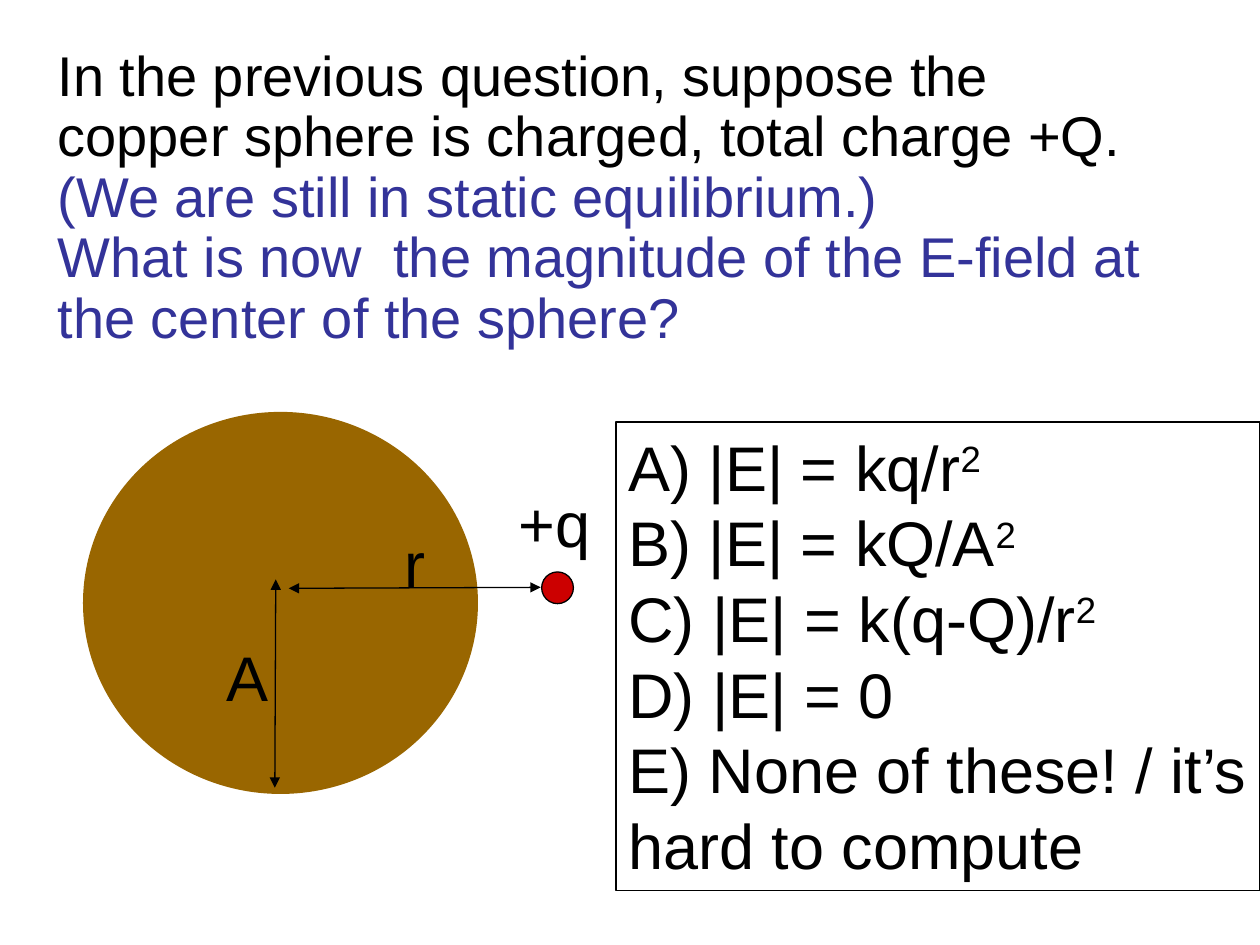
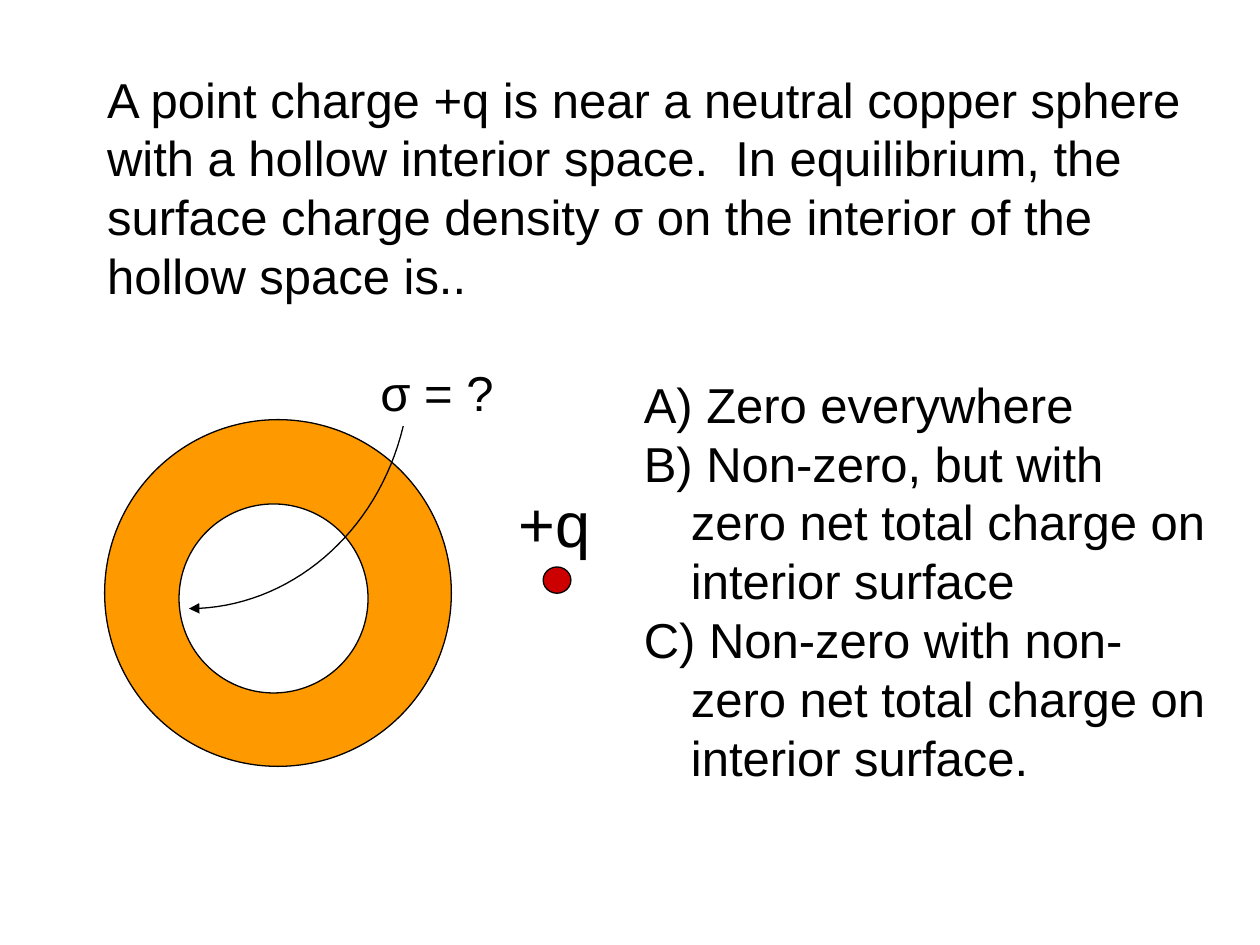
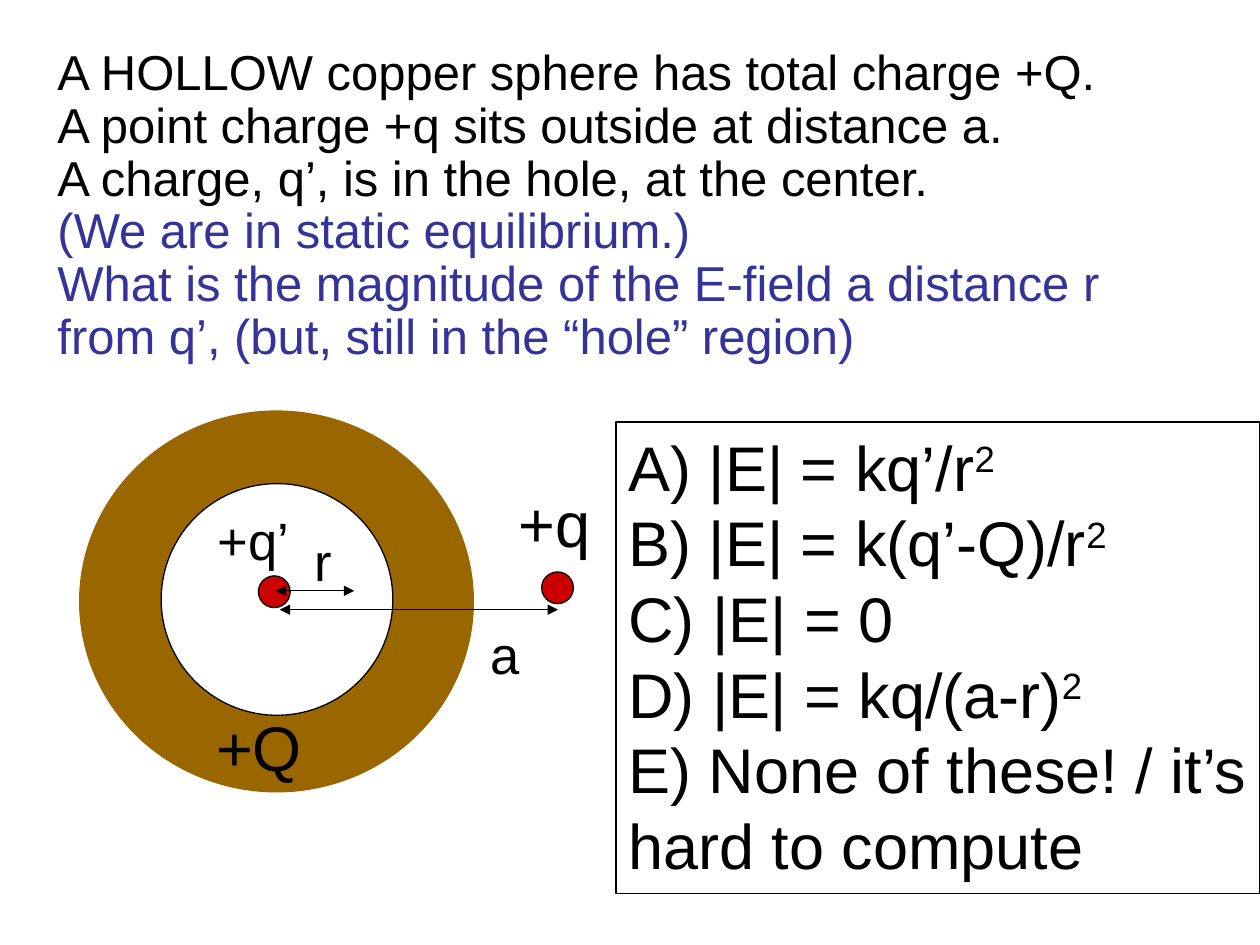
from lxml.etree import SubElement
from pptx import Presentation
from pptx.dml.color import RGBColor
from pptx.enum.shapes import MSO_CONNECTOR, MSO_SHAPE
from pptx.enum.text import MSO_ANCHOR, MSO_AUTO_SIZE, PP_ALIGN
from pptx.oxml.ns import qn
from pptx.util import Cm, Pt

BLACK, BLUE, RED = "000000", "333399", "CC0000"
COPPER, ORANGE, WHITE = "996600", "FF9900", "FFFFFF"
BODY = (0.91, 0.84, 22.73, 6.76)
SPOT = 0.64
LAST = "E) None of these! / it’s hard to compute"


def tint(code):
    """Turn a hex string into a colour."""
    return RGBColor.from_string(code)


def apply(item, form):
    """Set each attribute named in a dict of format values."""
    for name, value in form.items():
        setattr(item, name, value)


def stroke(line, code=BLACK, width=0.75, ends=()):
    """Style a line and put triangles on the named ends."""
    line.color.rgb = tint(code)
    line.width = Pt(width)
    for end in ends:
        SubElement(line._get_or_add_ln(), qn(f"a:{end}")).set("type", "triangle")


def write(frame, lines, size, wrap=True, fit=True, form=None):
    """Fill a frame with (text, colour) lines; a caret starts a superscript."""
    grow = MSO_AUTO_SIZE.SHAPE_TO_FIT_TEXT if fit else MSO_AUTO_SIZE.NONE
    apply(frame, {"word_wrap": wrap, "auto_size": grow,
                  "vertical_anchor": MSO_ANCHOR.TOP})
    for pos, (text, code) in enumerate(lines):
        para = frame.paragraphs[0] if pos == 0 else frame.add_paragraph()
        apply(para, {"alignment": PP_ALIGN.LEFT, **(form or {})})
        for rank, part in enumerate(text.split("^")):
            run = para.add_run()
            run.text = part
            apply(run.font, {"name": "Arial", "size": Pt(size)})
            run.font.color.rgb = tint(code)
            if rank:
                run._r.get_or_add_rPr().set("baseline", "30000")


def label(slide, text, x, y, wide, high=1.78, size=36, wrap=False):
    """Add a short label of one line."""
    box = slide.shapes.add_textbox(Cm(x), Cm(y), Cm(wide), Cm(high))
    write(box.text_frame, [(text, BLACK)], size, wrap)


def prompt(slide, lines, size, area=BODY, form=None):
    """Add the question at the top of the slide."""
    box = slide.shapes.add_textbox(*map(Cm, area))
    write(box.text_frame, lines, size, fit=False, form=form)


def disc(slide, x, y, wide, high, fill, edge=BLACK, width=0.75):
    """Add a filled ellipse."""
    oval = slide.shapes.add_shape(MSO_SHAPE.OVAL, Cm(x), Cm(y), Cm(wide), Cm(high))
    oval.shadow.inherit = False
    oval.fill.solid()
    oval.fill.fore_color.rgb = tint(fill)
    stroke(oval.line, edge, width)


def sphere(slide, x, y):
    """Add the copper sphere."""
    disc(slide, x, y, 7.75, 7.49, COPPER, COPPER, 6)


def charge(slide, x=10.92, y=11.53, wide=SPOT, high=SPOT):
    """Add a red point charge."""
    disc(slide, x, y, wide, high, RED)


def arrow(slide, *ends):
    """Add a straight line with a triangle at both ends."""
    line = slide.shapes.add_connector(MSO_CONNECTOR.STRAIGHT, *map(Cm, ends))
    stroke(line.line, ends=("headEnd", "tailEnd"))
    SubElement(line._element.spPr, qn("a:effectLst"))


def curve(slide, *knots):
    """Draw a cubic curve with a triangle at its start."""
    dots = []
    for step in range(33):
        t = step / 32
        mix = ((1 - t) ** 3, 3 * t * (1 - t) ** 2, 3 * t * t * (1 - t), t ** 3)
        dots.append([Cm(sum(w * k[axis] for w, k in zip(mix, knots)))
                     for axis in (0, 1)])
    pen = slide.shapes.build_freeform(*dots[0])
    pen.add_line_segments(dots[1:], close=False)
    arc = pen.convert_to_shape()
    arc.shadow.inherit = False
    arc.fill.background()
    stroke(arc.line, ends=("headEnd",))


def choices(slide, lines, high):
    """Add the framed list of answers."""
    box = slide.shapes.add_shape(MSO_SHAPE.RECTANGLE, Cm(12.42), Cm(8.51),
                                 Cm(12.98), Cm(high))
    box.shadow.inherit = False
    box.fill.background()
    stroke(box.line)
    write(box.text_frame, [(text, BLACK) for text in lines + [LAST]], 36)


def listing(slide, lines, auto):
    """Add hanging answers, the first few of them lettered by rule."""
    box = slide.shapes.add_textbox(Cm(12.73), Cm(7.42), Cm(11.86), Cm(8.64))
    write(box.text_frame, [(text, BLACK) for text in lines], 28)
    for pos, para in enumerate(box.text_frame.paragraphs):
        props = para._p.get_or_add_pPr()
        props.set("marL", str(Cm(0.95)))
        props.set("indent", str(-Cm(0.95)))
        if pos < auto:
            SubElement(props, qn("a:buFont")).set("typeface", "Arial")
            SubElement(props, qn("a:buAutoNum")).set("type", "alphaUcParenR")


def solid(slide):
    """Build the slide on the charged solid sphere."""
    prompt(slide, [
        ("In the previous question, suppose the copper sphere is charged, "
         "total charge +Q.", BLACK),
        ("(We are still in static equilibrium.)", BLUE),
        ("What is now  the magnitude of the E-field at the center of the sphere?",
         BLUE)], 32, form={"line_spacing": 0.9})
    sphere(slide, 1.78, 8.41)
    charge(slide)
    label(slide, "+q", 10.21, 9.65, 1.96)
    arrow(slide, 5.82, 11.86, 10.9, 11.84)
    label(slide, "r", 7.9, 10.44, 0.84, wrap=True)
    choices(slide, ["A) |E| = kq/r^2", "B) |E| = kQ/A^2",
                    "C) |E| = k(q-Q)/r^2", "D) |E| = 0"], 9.45)
    arrow(slide, 5.56, 11.68, 5.54, 15.88)
    label(slide, "A", 4.32, 12.75, 1.35)


def shell(slide):
    """Build the slide on the neutral hollow sphere."""
    prompt(slide, [
        ("A point charge +q is near a neutral copper sphere with a hollow "
         "interior space.  In equilibrium, the surface charge density σ on the "
         "interior of the hollow space is..", BLACK)],
        28, (1.91, 1.27, 22.86, 5.51))
    disc(slide, 2.11, 8.46, 6.99, 6.99, ORANGE)
    charge(slide, 10.95, 11.43, 0.56, 0.53)
    label(slide, "+q", 10.21, 9.65, 1.96)
    disc(slide, 3.61, 10.16, 3.81, 3.81, WHITE)
    curve(slide, (3.81, 12.27), (5.84, 12.27), (7.62, 10.74), (8.13, 8.59))
    label(slide, "σ = ?", 7.42, 7.19, 2.79, 1.45, 28)
    listing(slide, [
        " Zero everywhere",
        " Non-zero, but with zero net total charge on interior surface",
        "C) Non-zero with non-zero net total charge on interior surface."], 2)


def hollow(slide):
    """Build the slide on the charge inside the hole."""
    prompt(slide, [
        ("A HOLLOW copper sphere has total charge +Q.", BLACK),
        ("A point charge +q sits outside at distance a.", BLACK),
        ("A charge, q’, is in the hole, at the center.", BLACK),
        ("(We are in static equilibrium.)", BLUE),
        ("What is the magnitude of the E-field a distance r from q’, "
         "(but, still in the “hole” region)", BLUE)],
        28, form={"line_spacing": 0.9})
    sphere(slide, 1.7, 8.38)
    charge(slide)
    label(slide, "+q", 10.21, 9.65, 1.96)
    choices(slide, ["A) |E| = kq’/r^2", "B) |E| = k(q’-Q)/r^2",
                    "C) |E| = 0", "D) |E| = kq/(a-r)^2"], 9.5)
    disc(slide, 3.25, 9.75, 4.67, 4.67, WHITE)
    label(slide, "+Q", 4.11, 14.15, 2.24)
    label(slide, "+q’", 4.14, 10.11, 1.96, 1.52, 30)
    charge(slide, 5.21, 11.61)
    arrow(slide, 5.56, 11.91, 7.14, 11.91)
    label(slide, "r", 6.1, 10.54, 0.84, 1.52, 30, True)
    arrow(slide, 5.64, 12.29, 11.25, 12.29)
    label(slide, "a", 9.63, 12.42, 0.84, 1.55, 30, True)


def main():
    """Build and save the deck."""
    deck = Presentation()
    apply(deck, {"slide_width": Cm(25.4), "slide_height": Cm(19.05)})
    for build in (solid, shell, hollow):
        build(deck.slides.add_slide(deck.slide_layouts[6]))
    deck.save("out.pptx")


if __name__ == "__main__":
    main()
